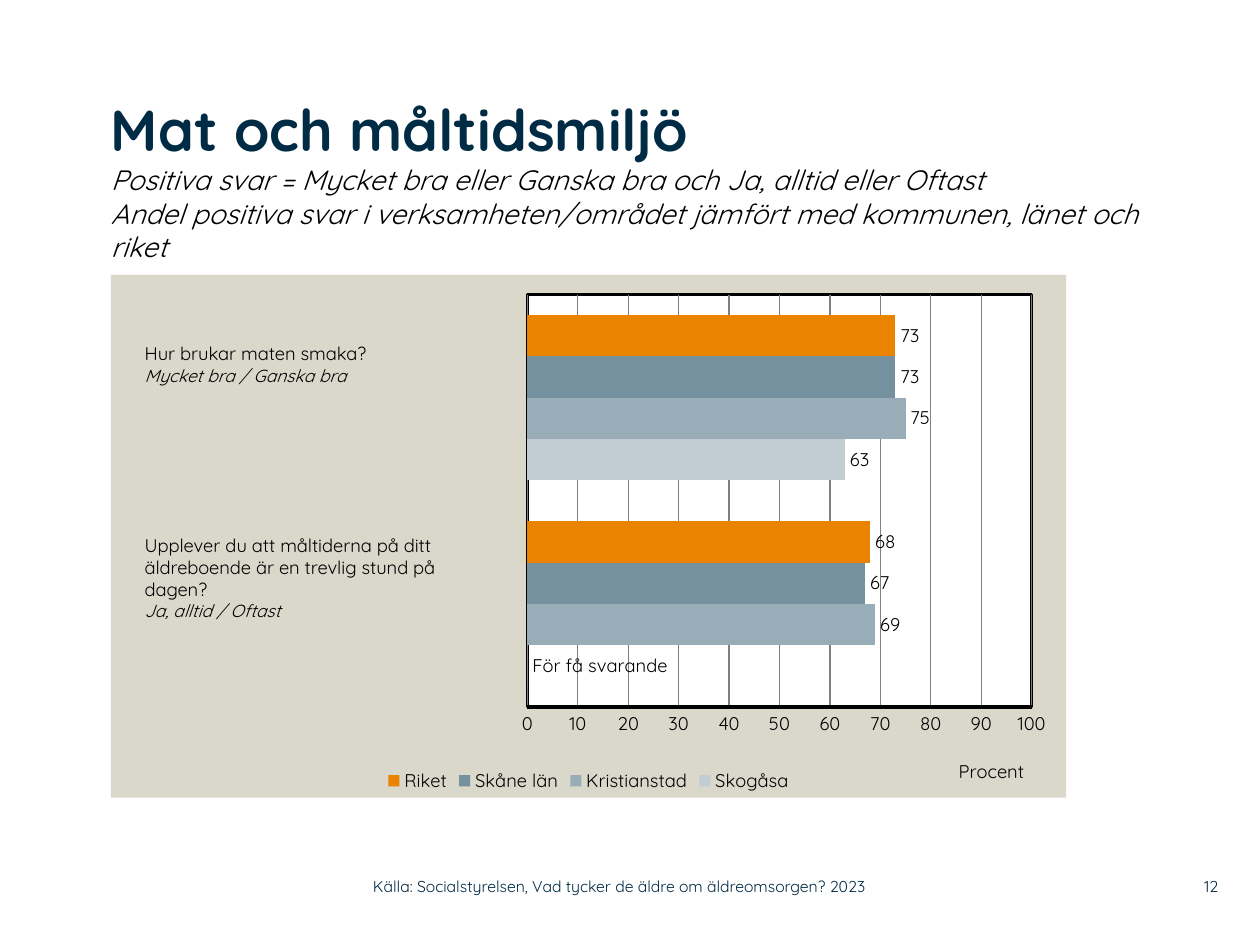
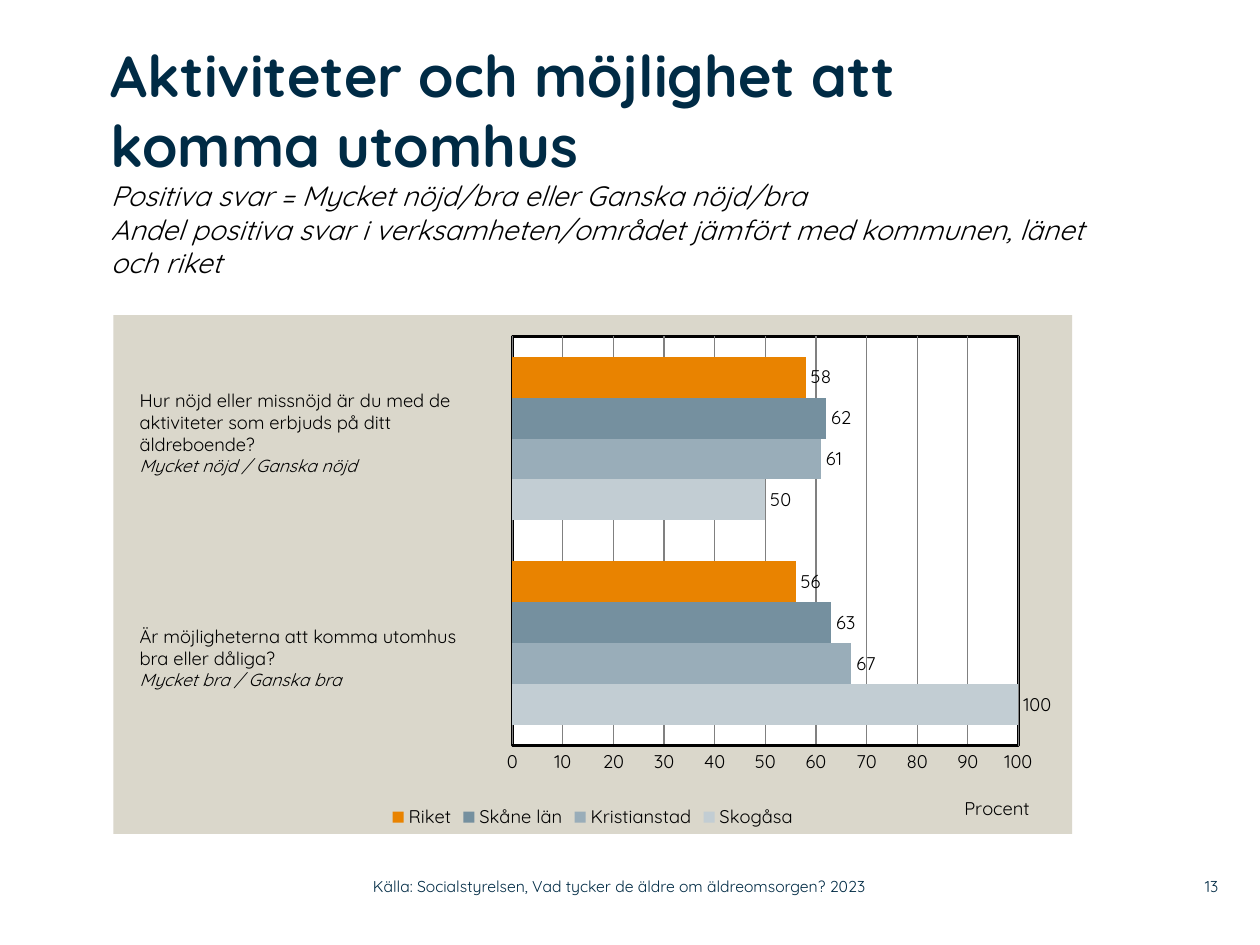
"""Build two slides with survey results on meals and activities in elderly care."""
from lxml import etree
from pptx import Presentation
from pptx.chart.data import CategoryChartData
from pptx.dml.color import RGBColor
from pptx.enum.chart import XL_CHART_TYPE as CT, XL_LABEL_POSITION as LP
from pptx.enum.chart import XL_LEGEND_POSITION as LEG, XL_TICK_MARK as TM
from pptx.enum.text import MSO_ANCHOR as ANC, MSO_AUTO_SIZE as AUTO, PP_ALIGN as AL
from pptx.oxml import parse_xml
from pptx.oxml.ns import nsdecls, qn
from pptx.util import Pt

FONT = "Quicksand"
NAVY = RGBColor(0x00, 0x2B, 0x45)
BLACK = RGBColor(0x00, 0x00, 0x00)
WHITE = RGBColor(0xFF, 0xFF, 0xFF)
GREY = RGBColor(0x80, 0x80, 0x80)
SAND = RGBColor(0xDA, 0xD7, 0xCB)
SERIES = [
    ("Skogåsa", RGBColor(0xC2, 0xCD, 0xD3)),
    ("Kristianstad", RGBColor(0x99, 0xAD, 0xB9)),
    ("Skåne län", RGBColor(0x75, 0x90, 0x9F)),
    ("Riket", RGBColor(0xE9, 0x83, 0x00)),
]
COMPARED = "Andel positiva svar i verksamheten/området jämfört med kommunen, länet och riket"
SOURCE = "Källa: Socialstyrelsen, Vad tycker de äldre om äldreomsorgen? 2023"
TOO_FEW = "För få svarande"
SLIDES = [
    dict(number="12", title="Mat och måltidsmiljö",
         scale="Positiva svar = Mycket bra eller Ganska bra och Ja, alltid eller Oftast",
         title_box=(63.4, 53.3, 606.2, 103.7),
         chart_box=(63.4, 157, 545.8, 298.8), plot=(0.436, 0.038),
         values=[(0, 63), (69, 75), (67, 73), (68, 73)],
         questions=[
             ((75.6, 192.2, 199.4, 45.4), ["Hur brukar maten smaka?"], "Mycket bra / Ganska bra"),
             ((75.6, 301.7, 199.4, 70.6),
              ["Upplever du att måltiderna på ditt äldreboende är en trevlig stund på", "dagen?"],
              "Ja, alltid / Oftast")]),
    dict(number="13", title="Aktiviteter och möjlighet att komma utomhus",
         scale="Positiva svar = Mycket nöjd/bra eller Ganska nöjd/bra",
         title_box=(63.4, 23, 561.6, 136.1),
         chart_box=(64.8, 180, 547.9, 296.6), plot=(0.416, 0.041),
         values=[(100, 50), (67, 61), (63, 62), (56, 58)],
         questions=[
             ((72.7, 218.9, 216, 70.6),
              ["Hur nöjd eller missnöjd är du med de aktiviteter som erbjuds på ditt äldreboende?"],
              "Mycket nöjd / Ganska nöjd"),
             ((72.7, 353.5, 216.7, 58.3),
              ["Är möjligheterna att komma utomhus", "bra eller dåliga?"],
              "Mycket bra / Ganska bra")]),
]


def style(font, size, color=BLACK, bold=False, italic=False):
    font.name, font.size, font.bold, font.italic = FONT, Pt(size), bold, italic
    font.color.rgb = color


def manual_layout(x, y, w=None, h=None):
    parts = [("xMode", "edge"), ("yMode", "edge"), ("x", x), ("y", y)]
    if w:
        parts = [("layoutTarget", "inner")] + parts + [("w", w), ("h", h)]
    layout = parse_xml(f"<c:layout {nsdecls('c')}><c:manualLayout/></c:layout>")
    for tag, val in parts:
        etree.SubElement(layout[0], qn("c:" + tag)).set("val", str(val))
    return layout


prs = Presentation()
prs.slide_width, prs.slide_height = Pt(720), Pt(540)

for page in SLIDES:
    s = prs.slides.add_slide(prs.slide_layouts[5])

    sp = s.shapes.title
    sp.left, sp.top, sp.width, sp.height = [Pt(v) for v in page["title_box"]]
    tf = sp.text_frame
    tf.margin_left = tf.margin_top = tf.margin_right = tf.margin_bottom = 0
    tf.vertical_anchor, tf.auto_size, tf.word_wrap = ANC.TOP, AUTO.NONE, True
    p = tf.paragraphs[0]
    p.alignment = AL.LEFT
    r = p.add_run()
    r.text = page["title"]
    style(r.font, 33, NAVY, bold=True)
    for line in (page["scale"], COMPARED):
        p.add_line_break()
        r = p.add_run()
        r.text = line
        style(r.font, 16, italic=True)

    data = CategoryChartData()
    data.categories = ["1", "2"]
    for (name, color), values in zip(SERIES, page["values"]):
        data.add_series(name, values)
    box = [Pt(v) for v in page["chart_box"]]
    chart = s.shapes.add_chart(CT.BAR_CLUSTERED, *box, data).chart
    style(chart.font, 10.5)
    chart.has_title = False
    chart.has_legend = True
    chart.legend.position = LEG.BOTTOM
    chart.legend.include_in_layout = False
    style(chart.legend.font, 10.5)

    chart.category_axis.visible = False
    axis = chart.value_axis
    axis.minimum_scale, axis.maximum_scale, axis.major_unit = 0, 100, 10
    axis.major_tick_mark = axis.minor_tick_mark = TM.NONE
    axis.format.line.color.rgb = BLACK
    axis.format.line.width = Pt(2)
    axis.major_gridlines.format.line.color.rgb = GREY
    axis.major_gridlines.format.line.width = Pt(0.75)
    style(axis.tick_labels.font, 10.5)
    r = axis.axis_title.text_frame.paragraphs[0].add_run()
    r.text = "Procent"
    style(r.font, 10.5)
    title = axis.axis_title._element
    for old in title.findall(qn("c:layout")):
        title.remove(old)
    title.find(qn("c:tx")).addnext(manual_layout(0.884, 0.918))

    plot = chart.plots[0]
    plot.gap_width, plot.overlap, plot.vary_by_categories = 100, 0, False
    for series, (name, color) in zip(plot.series, SERIES):
        series.format.fill.solid()
        series.format.fill.fore_color.rgb = color
        labels = series.data_labels
        labels.show_value = True
        labels.position = LP.OUTSIDE_END
        style(labels.font, 10.5)
        if series.values[0] == 0:
            label = series.points[0].data_label
            r = label.text_frame.paragraphs[0].add_run()
            r.text = TOO_FEW
            style(r.font, 10.5)
            label.position = LP.OUTSIDE_END

    area = chart._chartSpace.chart.plotArea
    for old in area.findall(qn("c:layout")):
        area.remove(old)
    area.insert(0, manual_layout(*page["plot"], 0.528, 0.789))
    area.append(parse_xml(
        f"<c:spPr {nsdecls('c', 'a')}><a:solidFill><a:srgbClr val='{WHITE}'/></a:solidFill>"
        f"<a:ln w='{Pt(1.5)}'><a:solidFill><a:srgbClr val='{BLACK}'/></a:solidFill></a:ln></c:spPr>"))
    chart._chartSpace.chart.addnext(parse_xml(
        f"<c:spPr {nsdecls('c', 'a')}><a:solidFill><a:srgbClr val='{SAND}'/></a:solidFill>"
        "<a:ln><a:noFill/></a:ln></c:spPr>"))

    for box, question, answer in page["questions"]:
        tf = s.shapes.add_textbox(*[Pt(v) for v in box]).text_frame
        tf.word_wrap, tf.auto_size = True, AUTO.SHAPE_TO_FIT_TEXT
        for i, line in enumerate(question + [answer]):
            p = tf.add_paragraph() if i else tf.paragraphs[0]
            r = p.add_run()
            r.text = line
            is_answer = i == len(question)
            style(r.font, 10 if is_answer else 10.5, italic=is_answer)

    for left, width, text, align in ((662.4, 33.8, page["number"], AL.RIGHT),
                                     (213.1, 319, SOURCE, AL.LEFT)):
        tf = s.shapes.add_textbox(Pt(left), Pt(496.1), Pt(width), Pt(20.9)).text_frame
        tf.margin_left = tf.margin_top = tf.margin_right = tf.margin_bottom = 0
        tf.word_wrap, tf.vertical_anchor = True, ANC.MIDDLE
        p = tf.paragraphs[0]
        p.alignment = align
        r = p.add_run()
        r.text = text
        style(r.font, 9, NAVY)

prs.save("out.pptx")
